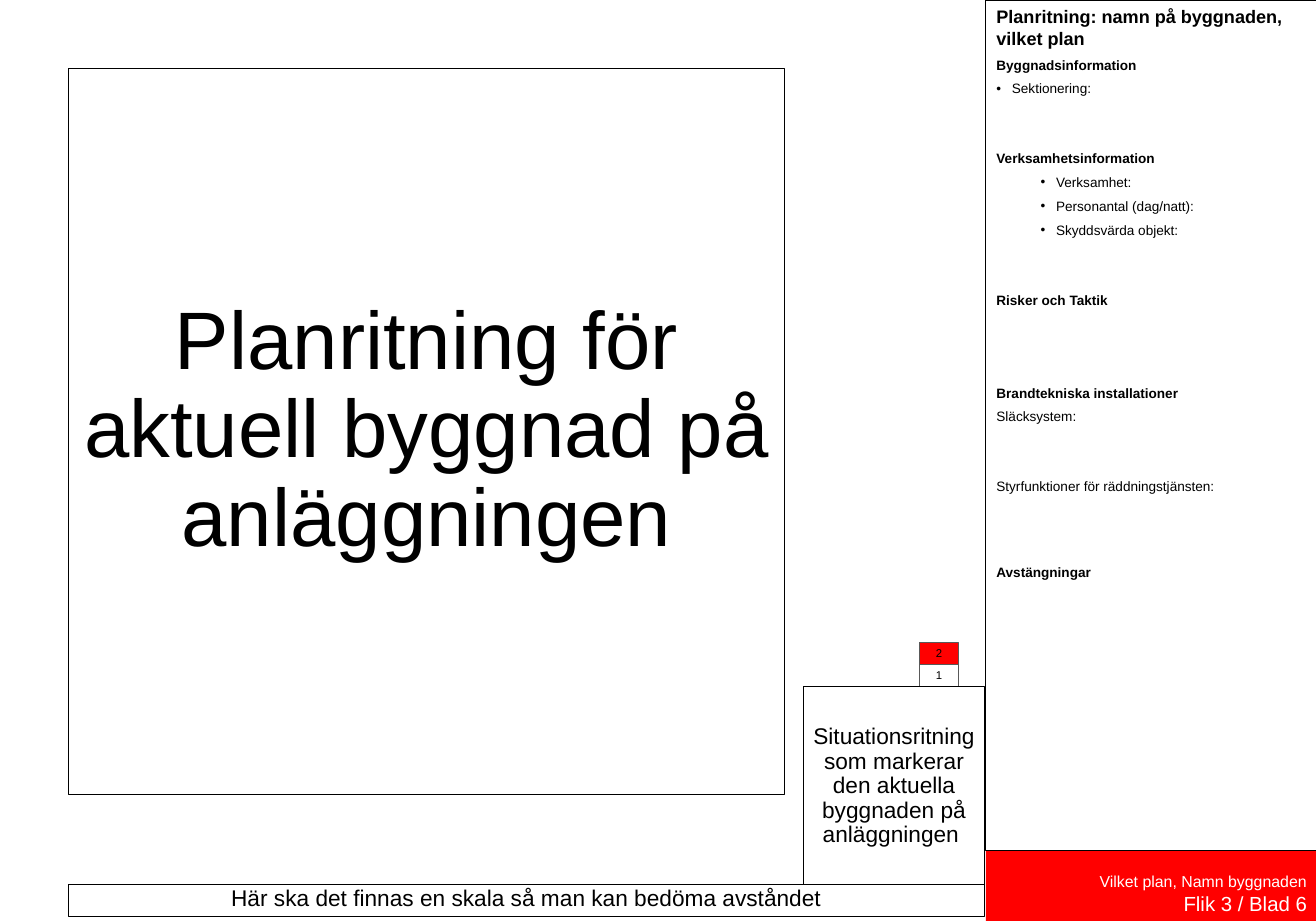
"""Builds a floor plan sheet with an information sidebar."""
from lxml import etree
from pptx import Presentation
from pptx import util as u
from pptx.dml.color import RGBColor
from pptx.enum import shapes, text
from pptx.oxml.ns import qn

LINE_PITCH = 20.4
GAP = 6.6
INDENT = 13.7
DETAILS = [
    ("Planritning: namn på byggnaden, vilket plan", 16, True, 0, None),
    ("Byggnadsinformation", 12, True, GAP, None),
    ("Sektionering:", 12, False, GAP, 0),
    ("Verksamhetsinformation", 12, True, GAP + 2 * LINE_PITCH, None),
    ("Verksamhet:", 12, False, GAP, 1),
    ("Personantal (dag/natt):", 12, False, GAP, 1),
    ("Skyddsvärda objekt:", 12, False, GAP, 1),
    ("Risker och Taktik", 12, True, GAP + 2 * LINE_PITCH, None),
    ("Brandtekniska installationer", 12, True, GAP + 3 * LINE_PITCH, None),
    ("Släcksystem:", 12, False, GAP, None),
    ("Styrfunktioner för räddningstjänsten:", 12, False, GAP + 2 * LINE_PITCH, None),
    ("Avstängningar", 12, True, 3 * LINE_PITCH, None),
]


def color(hex_string):
    """Return the colour for a hex string."""
    return RGBColor.from_string(hex_string)


def style(paragraph, size, bold=False, ink="000000"):
    """Format every run of a paragraph."""
    for run in paragraph.runs:
        run.font.name = "Arial"
        run.font.size = u.Pt(size)
        run.font.bold = bold
        run.font.color.rgb = color(ink)


def add_bullet(paragraph, level):
    """Give a paragraph a hanging bullet at the given level."""
    paragraph.level = level
    properties = paragraph._p.get_or_add_pPr()
    properties.set("marL", str(u.Pt(INDENT + 39 * level)))
    properties.set("indent", str(-u.Pt(INDENT)))
    etree.SubElement(properties, qn("a:buFont")).set("typeface", "Arial")
    etree.SubElement(properties, qn("a:buChar")).set("char", "•")


def add_frame(slide, box, fill=None, line=None, weight=1):
    """Draw a rectangle in the box and return it."""
    frame = slide.shapes.add_shape(shapes.MSO_SHAPE.RECTANGLE, *map(u.Pt, box))
    frame.shadow.inherit = False
    if fill:
        frame.fill.solid()
        frame.fill.fore_color.rgb = color(fill)
    else:
        frame.fill.background()
    if line:
        frame.line.color.rgb = color(line)
        frame.line.width = u.Pt(weight)
    else:
        frame.line.fill.background()
    return frame


def add_caption(frame, wording, size, spacing=1.0, anchor=text.MSO_ANCHOR.MIDDLE):
    """Write a centred caption inside a frame."""
    body = frame.text_frame
    body.word_wrap = True
    body.vertical_anchor = anchor
    body.text = wording
    caption = body.paragraphs[0]
    caption.alignment = text.PP_ALIGN.CENTER
    caption.line_spacing = spacing
    style(caption, size)


def add_text_area(slide, box):
    """Add a wrapping text box and return its text frame."""
    area = slide.shapes.add_textbox(*map(u.Pt, box)).text_frame
    area.word_wrap = True
    area.margin_left = area.margin_right = u.Pt(7.9)
    return area


def add_sidebar(slide, left, top, width, height, footer_height=62.6):
    """Place the building details and the red sheet label."""
    details_height = height - footer_height
    footer_top = top + details_height
    add_frame(slide, (left, footer_top, width, footer_height), "FF0000")
    add_frame(slide, (left, top, width, details_height), "FFFFFF", "000000", 0.75)

    label = add_text_area(slide, (left + 1.5, footer_top + 15.8, width - 1.5, 46.8))
    label.text = "Vilket plan, Namn byggnaden\nFlik 3 / Blad 6"
    for paragraph, size in zip(label.paragraphs, (14, 18)):
        paragraph.alignment = text.PP_ALIGN.RIGHT
        style(paragraph, size, ink="FFFFFF")

    details = add_text_area(slide, (left + 1.5, top + 1.4, width - 1.5, 570.2))
    details.text = "\n".join(entry[0] for entry in DETAILS)
    for paragraph, (_, size, bold, before, level) in zip(details.paragraphs, DETAILS):
        paragraph.space_before = u.Pt(before)
        if level is not None:
            add_bullet(paragraph, level)
        style(paragraph, size, bold)


def add_floor_stack(slide, left, top, width, height):
    """Stack the floor numbers with the current floor in red."""
    floor_height = height / 2
    for floor, fill in ((1, None), (2, "FF0000")):
        box = (left, top + (2 - floor) * floor_height, width, floor_height)
        add_caption(add_frame(slide, box, fill, "595959", 0.75), str(floor), 10,
                    anchor=text.MSO_ANCHOR.TOP)


def add_drawing_area(slide, left, top, width, height):
    """Place the floor plan, the site plan and the scale bar."""
    site_left, site_top, scale_top = left + 649.4, top + 545.8, top + 720.7
    right, bottom = left + width, top + height
    add_floor_stack(slide, right - 56.9, site_top - 38.9, 33.8, 38.9)
    areas = [
        ((left, top, 632.2, 641.5),
         "Planritning för aktuell byggnad på anläggningen", 72, 0.9),
        ((site_left, site_top, right - site_left, scale_top - site_top + 2),
         "Situationsritning som markerar den aktuella byggnaden på anläggningen ", 20, 0.9),
        ((left, scale_top, width, bottom - scale_top),
         "Här ska det finnas en skala så man kan bedöma avståndet", 20, 0.8),
    ]
    for box, wording, size, spacing in areas:
        add_caption(add_frame(slide, box, "FFFFFF", "000000"), wording, size, spacing)


def main():
    """Build and save the sheet."""
    deck = Presentation()
    deck.slide_width, deck.slide_height = u.Pt(1162.1), u.Pt(813.6)
    sheet = deck.slides.add_slide(deck.slide_layouts[6])
    add_sidebar(sheet, 870.5, 0, 291.6, 813.6)
    add_drawing_area(sheet, 60.5, 60.5, 808.6, 748.8)
    deck.save("out.pptx")


if __name__ == "__main__":
    main()
